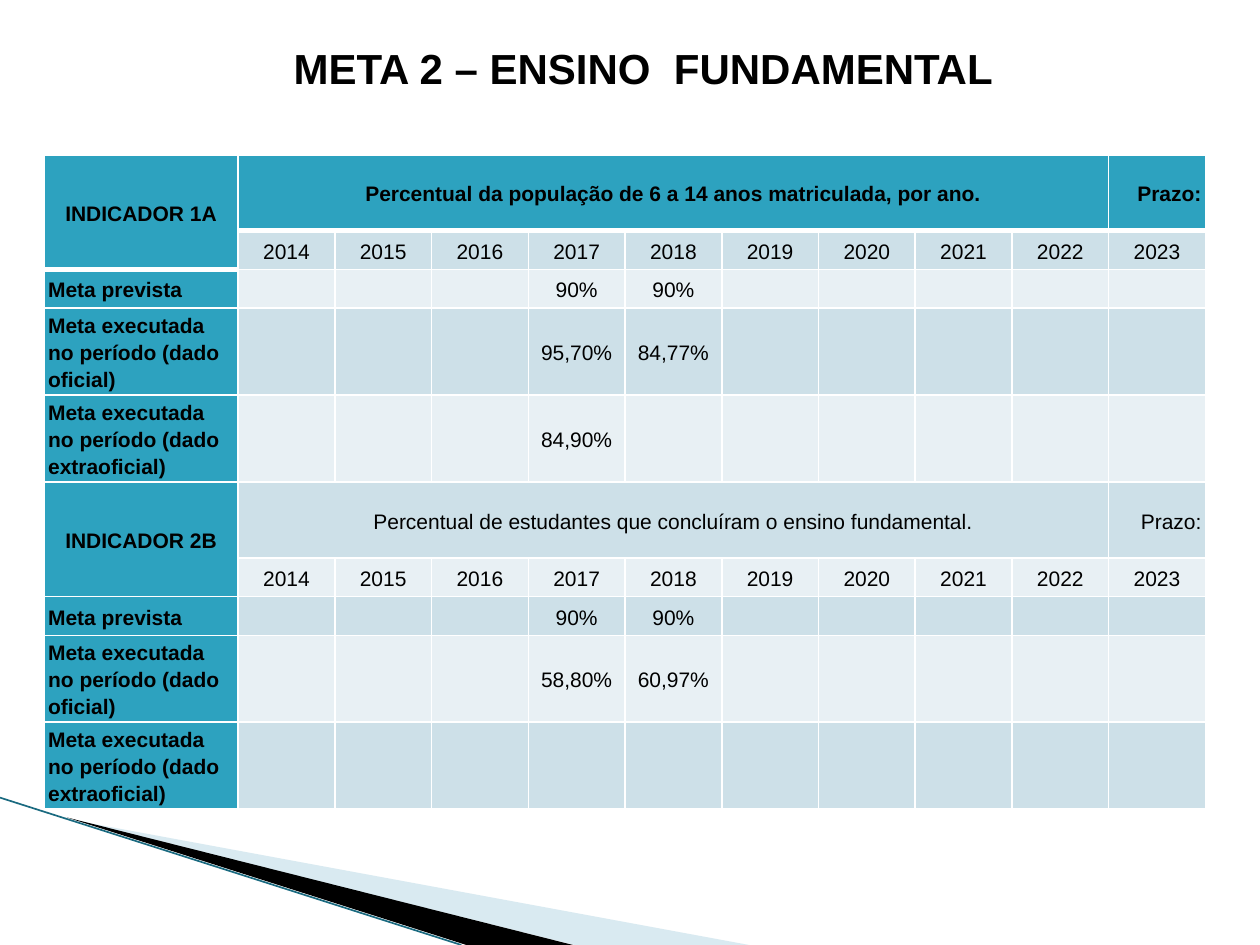
"""Build the slide with the indicators of Meta 2, Ensino Fundamental."""
from dataclasses import dataclass

import lxml.etree
import pptx
import pptx.dml.color
import pptx.enum.shapes
import pptx.enum.text
import pptx.oxml.ns
import pptx.util

Cm = pptx.util.Cm
Pt = pptx.util.Pt
ALIGN = pptx.enum.text.PP_ALIGN
ANCHOR = pptx.enum.text.MSO_ANCHOR
qn = pptx.oxml.ns.qn


@dataclass(frozen=True)
class Theme:
    font: str = "Arial"
    title: int = 24
    body: int = 12
    text: str = "000000"
    accent: str = "2DA2BF"
    bands: tuple = ("E8F0F4", "CDE0E8")
    border: str = "FFFFFF"
    wedge: str = "A0CBDC"
    edge: str = "1A6A80"


THEME = Theme()
YEARS = [str(year) for year in range(2014, 2024)]
ROW_HEIGHTS = (1.53, 0.78, 0.78, 1.75, 1.75)
LABELS = (
    "Meta prevista",
    "Meta executada no período (dado oficial)",
    "Meta executada no período (dado extraoficial)",
)
INDICATORS = (
    ("INDICADOR 1A", "Percentual da população de 6 a 14 anos matriculada, por ano.",
     ({"2017": "90%", "2018": "90%"}, {"2017": "95,70%", "2018": "84,77%"}, {"2017": "84,90%"})),
    ("INDICADOR 2B", "Percentual de estudantes que concluíram o ensino fundamental.",
     ({"2017": "90%", "2018": "90%"}, {"2017": "58,80%", "2018": "60,97%"}, {})),
)


def rgb(color):
    return pptx.dml.color.RGBColor.from_string(color)


def format_runs(p, size, bold):
    for r in p.runs:
        r.font.name = THEME.font
        r.font.size = Pt(size)
        r.font.bold = bold
        r.font.color.rgb = rgb(THEME.text)


def add_wedge(s, points, color, alpha=100):
    corners = [(Cm(x), Cm(y)) for x, y in points]
    builder = s.shapes.build_freeform(*corners[0])
    builder.add_line_segments(corners[1:])
    sp = builder.convert_to_shape()
    sp.shadow.inherit = False
    sp.fill.solid()
    sp.fill.fore_color.rgb = rgb(color)
    sp.line.fill.background()
    if alpha < 100:
        clr = sp.fill._xPr.find(".//" + qn("a:srgbClr"))
        lxml.etree.SubElement(clr, qn("a:alpha"), val=str(alpha * 1000))


def add_edge(s, x1, y1, x2, y2):
    line = s.shapes.add_connector(
        pptx.enum.shapes.MSO_CONNECTOR.STRAIGHT, Cm(x1), Cm(y1), Cm(x2), Cm(y2))
    line.line.color.rgb = rgb(THEME.edge)
    line.line.width = Pt(0.95)
    lxml.etree.SubElement(line._element.spPr, qn("a:effectLst"))


def add_title(s, text):
    sp = s.shapes.add_textbox(Cm(0.5), Cm(0.64), Cm(24.94), Cm(16.15))
    tf = sp.text_frame
    tf.word_wrap = True
    tf.margin_top = Cm(0.21)
    tf.text = text
    p = tf.paragraphs[0]
    p.alignment = ALIGN.CENTER
    format_runs(p, THEME.title, True)


def set_borders(cell, top, bottom):
    tcPr = cell._tc.get_or_add_tcPr()
    for side, width in (("L", 1), ("R", 1), ("T", top), ("B", bottom)):
        ln = lxml.etree.SubElement(tcPr, qn("a:ln" + side), w=str(Pt(width)))
        fill = lxml.etree.SubElement(ln, qn("a:solidFill"))
        lxml.etree.SubElement(fill, qn("a:srgbClr"), val=THEME.border)


def style_cell(cell, row, col):
    heavy_top = row == (2 if col == 0 else 1)
    heavy_bottom = row == 0 or (row, col) == (1, 0)
    set_borders(cell, 3 if heavy_top else 1, 3 if heavy_bottom else 1)
    cell.fill.solid()
    is_header = row == 0 or col == 0
    cell.fill.fore_color.rgb = rgb(THEME.accent if is_header else THEME.bands[row % 2])
    cell.vertical_anchor = ANCHOR.MIDDLE
    cell.margin_left = cell.margin_right = Cm(0.08)
    cell.margin_top = cell.margin_bottom = 0


def fill_cell(cell, text, align, bold):
    p = cell.text_frame.paragraphs[0]
    if text:
        p.text = text
        p.alignment = align
        p.line_spacing = 1.15
        format_runs(p, THEME.body, bold)
    else:
        lxml.etree.SubElement(p._p, qn("a:endParaRPr"), sz=str(THEME.body * 100))


def indicator_rows(name, description, values):
    yield [name, description] + [""] * 8 + ["Prazo:"]
    yield [""] + YEARS
    for label, by_year in zip(LABELS, values):
        yield [label] + [by_year.get(year, "") for year in YEARS]


def cell_alignment(row, col):
    in_block = row % len(ROW_HEIGHTS)
    if in_block == 0 and col == len(YEARS):
        return ALIGN.RIGHT
    return ALIGN.LEFT if col == 0 and in_block > 1 else ALIGN.CENTER


def add_indicator_table(s):
    rows = [row for indicator in INDICATORS for row in indicator_rows(*indicator)]
    heights = ROW_HEIGHTS * len(INDICATORS)
    widths = [3.91] + [1.95] * len(YEARS)
    table = s.shapes.add_table(
        len(rows), len(widths), Cm(0.89), Cm(3.12), Cm(sum(widths)), Cm(sum(heights))).table
    table.first_row = table.horz_banding = False
    for column, width in zip(table.columns, widths):
        column.width = Cm(width)
    for i, (values, height) in enumerate(zip(rows, heights)):
        table.rows[i].height = Cm(height)
        for j, text in enumerate(values):
            cell = table.cell(i, j)
            style_cell(cell, i, j)
            fill_cell(cell, text, cell_alignment(i, j), i == 0 or j == 0)
    for top in range(0, len(rows), len(ROW_HEIGHTS)):
        table.cell(top, 0).merge(table.cell(top + 1, 0))
        table.cell(top, 1).merge(table.cell(top, 9))


def main():
    prs = pptx.Presentation()
    prs.slide_width, prs.slide_height = Cm(25.4), Cm(19.05)
    s = prs.slides.add_slide(prs.slide_layouts[6])
    add_wedge(s, [(1.4, 16.52), (15.1, 19.05), (11.58, 19.05)], THEME.wedge, 40)
    add_wedge(s, [(1.35, 16.48), (11.55, 19.05), (9.4, 19.05)], THEME.text)
    add_edge(s, 0, 16.08, 9.3, 19.05)
    add_title(s, "META 2 – ENSINO  FUNDAMENTAL")
    add_indicator_table(s)
    prs.save("out.pptx")


if __name__ == "__main__":
    main()
